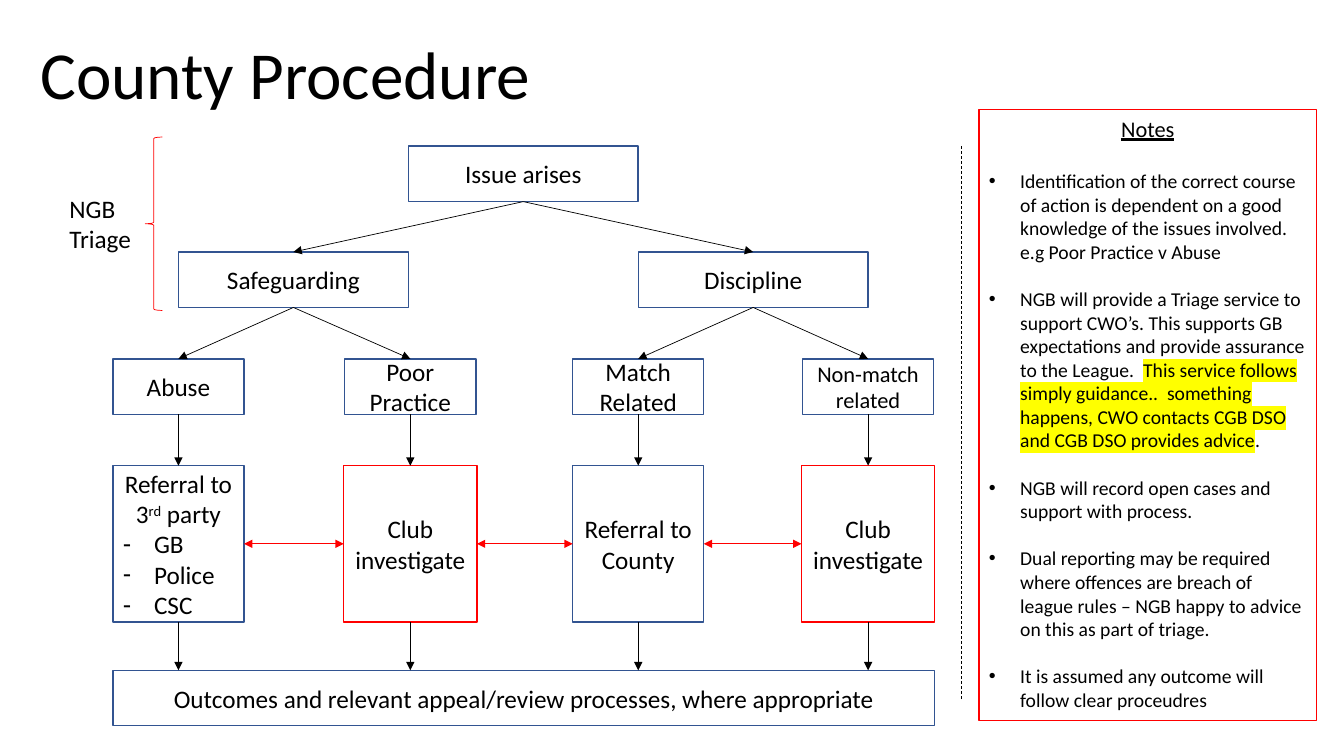
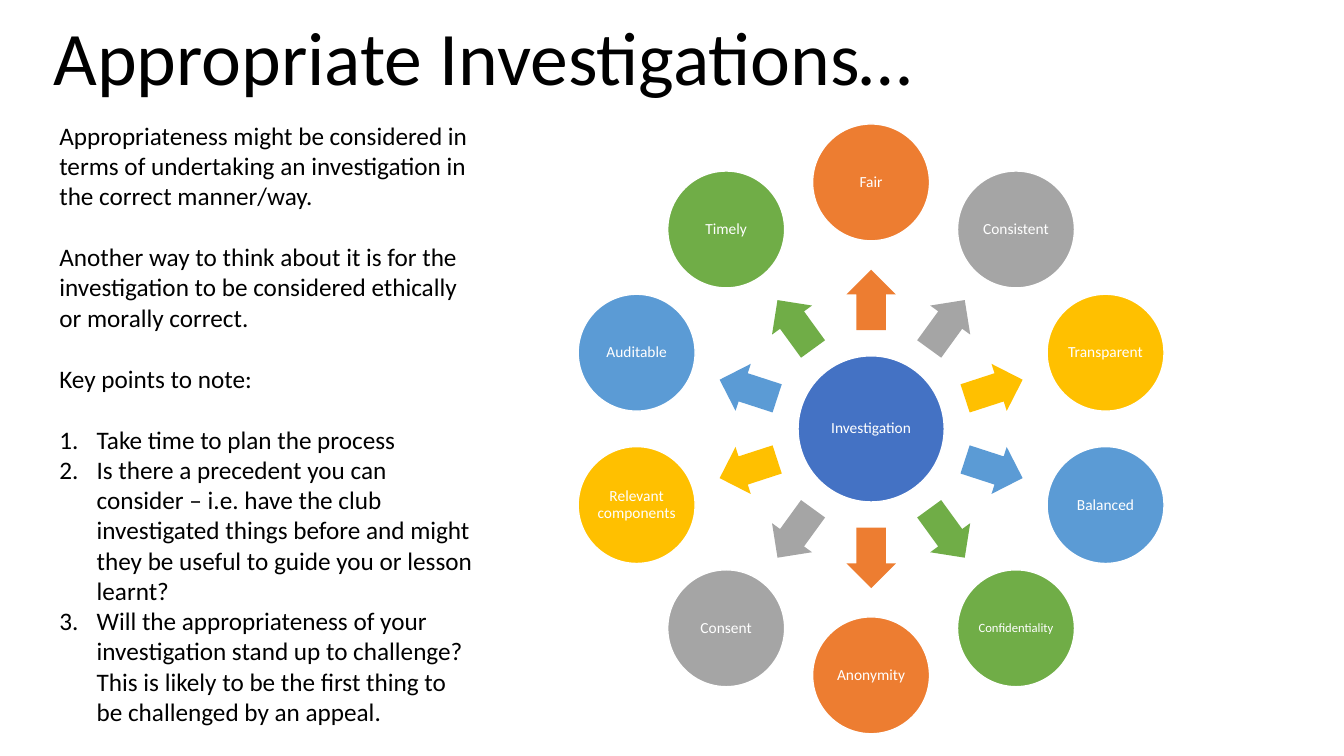
from math import cos, radians, sin

from lxml.etree import SubElement
from pptx import Presentation
from pptx.dml.color import RGBColor
from pptx.enum.dml import MSO_LINE
from pptx.enum.shapes import MSO_CONNECTOR, MSO_SHAPE
from pptx.enum.text import MSO_ANCHOR, MSO_AUTO_SIZE, PP_ALIGN
from pptx.oxml.ns import qn
from pptx.util import Pt

PX = 9144  # one px is a hundredth of an inch
FONT = "Calibri"
BLACK = RGBColor(0x00, 0x00, 0x00)
WHITE = RGBColor(0xFF, 0xFF, 0xFF)
NAVY = RGBColor(0x32, 0x54, 0x91)
RED = RGBColor(0xFF, 0x00, 0x00)
HUB_BLUE = RGBColor(0x44, 0x72, 0xC4)
WHEEL_COLOURS = [
    RGBColor(0xED, 0x7D, 0x31),
    RGBColor(0xA5, 0xA5, 0xA5),
    RGBColor(0xFF, 0xC0, 0x00),
    RGBColor(0x5B, 0x9B, 0xD5),
    RGBColor(0x70, 0xAD, 0x47),
]
HIGHLIGHT = "FFFF00"
TOP, LEFT, BOTTOM, RIGHT = range(4)

NOTES = [
    [("Identification of the correct course of action is dependent on a good "
      "knowledge of the issues involved.", {})],
    [("NGB will provide a Triage service to support CWO’s. This supports GB "
      "expectations and provide assurance to the League.  ", {}),
     ("This service follows simply guidance..  something happens, CWO contacts "
      "CGB DSO and CGB DSO provides advice", {"highlight": True}),
     (".", {})],
    [("NGB will record open cases and support with process.", {})],
    [("Dual reporting may be required where offences are breach of league rules "
      "– NGB happy to advice on this as part of triage.", {})],
    [("It is assumed any outcome will follow clear proceudres", {})],
]
INTRODUCTION = [
    "Appropriateness might be considered in terms of undertaking an "
    "investigation in the correct manner/way.",
    "Another way to think about it is for the investigation to be considered "
    "ethically or morally correct.",
    "Key points to note:",
]
KEY_POINTS = [
    "Take time to plan the process",
    "Is there a precedent you can consider – i.e. have the club investigated "
    "things before and might they be useful to guide you or lesson learnt?",
    "Will the appropriateness of your investigation stand up to challenge? "
    "This is likely to be the first thing to be challenged by an appeal.",
]
QUALITIES = ["Fair", "Consistent", "Transparent", "Balanced", "Confidentiality",
             "Anonymity", "Consent", "Relevant components", "Auditable", "Timely"]


def px(*lengths):
    return [round(length * PX) for length in lengths]


# Text
def add_span(para, text, size, colour=BLACK, underline=False, raised=False,
             highlight=False):
    span = para.add_run()
    span.text = text
    font = span.font
    font.size, font.name = Pt(size), FONT
    font.color.rgb = colour
    if underline:
        font.underline = True
    properties = font._element
    if raised:
        properties.set("baseline", "30000")
    if highlight:
        mark = SubElement(properties, qn("a:highlight"))
        SubElement(mark, qn("a:srgbClr")).set("val", HIGHLIGHT)
        properties.find(qn("a:latin")).addprevious(mark)


def add_para(frame, spans, size, colour=BLACK, align=PP_ALIGN.LEFT, before=0,
             bullet=None, indent=0, hanging=True):
    """Append a paragraph; spans is a string or a list of (text, style)."""
    para = frame.paragraphs[0]
    if para.runs:
        para = frame.add_paragraph()
    para.alignment = align
    para.space_before = Pt(before)
    properties = para._p.get_or_add_pPr()
    if indent:
        margin = px(indent)[0]
        properties.set("marL", str(margin))
        properties.set("indent", str(-margin if hanging else 0))
    if bullet == "number":
        SubElement(properties, qn("a:buAutoNum")).set("type", "arabicPeriod")
    elif bullet:
        SubElement(properties, qn("a:buFont")).set("typeface", "Arial")
        SubElement(properties, qn("a:buChar")).set("char", bullet)
    for text, style in ([(spans, {})] if isinstance(spans, str) else spans):
        add_span(para, text, size, colour, **style)
    return para


def add_text_box(page, left, top, width, height):
    frame = page.shapes.add_textbox(*px(left, top, width, height)).text_frame
    frame.word_wrap = True
    return frame


def add_title(page, text, left, top, width, height, size):
    title = page.shapes.title
    title.left, title.top, title.width, title.height = px(left, top, width, height)
    frame = title.text_frame
    frame.auto_size = MSO_AUTO_SIZE.NONE
    frame.word_wrap = False
    frame.vertical_anchor = MSO_ANCHOR.TOP
    add_para(frame, text, size)


# Shapes and lines
def add_figure(page, kind, left, top, width, height, fill=None, line=None, weight=1):
    figure = page.shapes.add_shape(kind, *px(left, top, width, height))
    figure.shadow.inherit = False
    if fill is None:
        figure.fill.background()
    else:
        figure.fill.solid()
        figure.fill.fore_color.rgb = fill
    if line is None:
        figure.line.fill.background()
    else:
        figure.line.color.rgb = line
        figure.line.width = Pt(weight)
    return figure


def add_step(page, text, left, top, width, height=55, line=NAVY, size=18):
    box = add_figure(page, MSO_SHAPE.RECTANGLE, left, top, width, height, line=line)
    box.text_frame.vertical_anchor = MSO_ANCHOR.MIDDLE
    add_para(box.text_frame, text, size, align=PP_ALIGN.CENTER)
    return box


def add_line(page, start, end, colour=BLACK):
    line = page.shapes.add_connector(MSO_CONNECTOR.STRAIGHT, *px(*start, *end))
    line.line.color.rgb = colour
    line.line.width = Pt(0.5)
    SubElement(line._element.spPr, qn("a:effectLst"))
    return line


def add_arrow(page, source, target=None, sides=(BOTTOM, TOP), end=(0, 0),
              colour=BLACK, double=False):
    """Arrow from a box side to another box side, or to the point end."""
    arrow = add_line(page, (0, 0), end, colour)
    arrow.begin_connect(source, sides[0])
    if target is not None:
        arrow.end_connect(target, sides[1])
    outline = arrow.line._get_or_add_ln()
    for tip in ("headEnd", "tailEnd") if double else ("tailEnd",):
        SubElement(outline, qn(f"a:{tip}")).set("type", "triangle")


# Regions of the procedure slide
def draw_flowchart(page, left, top):
    columns = [left + offset for offset in (65, 295, 521, 749)]
    branch_top, category_top = top + 105, top + 211
    action_top, outcome_top = top + 317, top + 520

    # Issue and its two branches
    issue = add_step(page, "Issue arises", (columns[0] + columns[2]) // 2, top, 228)
    branches = [add_step(page, text, x, branch_top, 228)
                for text, x in (("Safeguarding", columns[0]),
                                ("Discipline", columns[2]))]

    # Categories and actions, one pair per column
    categories = [add_step(page, text, x - 65, category_top, 130, size=size)
                  for (text, size), x in zip((("Abuse", 18), ("Poor Practice", 18),
                                              ("Match Related", 18),
                                              ("Non-match related", 16)), columns)]
    third_party = [("Referral to 3", {}), ("rd", {"raised": True}), (" party", {})]
    actions = [add_step(page, text, x - width // 2, action_top, width, 155, line)
               for (text, width, line), x in zip(((third_party, 130, NAVY),
                                                  ("Club investigate", 132, RED),
                                                  ("Referral to County", 130, NAVY),
                                                  ("Club investigate", 132, RED)),
                                                 columns)]
    for party in ("GB", "Police", "CSC"):
        add_para(actions[0].text_frame, party, 18, bullet="-", indent=31)

    add_step(page, "Outcomes and relevant appeal/review processes, where appropriate",
             left, outcome_top, 815)

    # Arrows
    for branch in branches:
        add_arrow(page, issue, branch)
    for index, (category, action) in enumerate(zip(categories, actions)):
        add_arrow(page, branches[index // 2], category)
        add_arrow(page, category, action)
        add_arrow(page, action, end=(columns[index], outcome_top))
    for action, neighbour in zip(actions, actions[1:]):
        add_arrow(page, action, neighbour, (RIGHT, LEFT), colour=RED, double=True)


def draw_triage_label(page, left, top):
    add_figure(page, MSO_SHAPE.LEFT_BRACE, left + 85, top, 17, 172, line=RED, weight=0.5)
    add_para(add_text_box(page, left, top + 51, 96, 71), "NGB Triage", 18)


def draw_notes(page, left, top, width, height):
    panel = add_figure(page, MSO_SHAPE.RECTANGLE, left, top, width, height,
                       line=RED, weight=0.75)
    frame = panel.text_frame
    frame.vertical_anchor = MSO_ANCHOR.TOP
    add_para(frame, [("Notes", {"underline": True})], 16, align=PP_ALIGN.CENTER)
    for index, note in enumerate(NOTES):
        add_para(frame, note, 14, before=17 if index else 19.5, bullet="•", indent=31)
        if index == 0:
            add_para(frame, "e.g Poor Practice v Abuse", 14, indent=31, hanging=False)


def build_procedure(page):
    add_title(page, "County Procedure", 30, 27, 512, 91, 48)
    draw_flowchart(page, 112, 145)
    draw_triage_label(page, 59, 136)
    divider = add_line(page, (954, 145), (954, 694))
    divider.line.dash_style = MSO_LINE.DASH
    draw_notes(page, 971, 109, 335, 606)


# Regions of the investigations slide
def draw_circle(page, text, centre_x, centre_y, diameter, fill, size=11):
    circle = add_figure(page, MSO_SHAPE.OVAL, centre_x - diameter / 2,
                        centre_y - diameter / 2, diameter, diameter, fill, WHITE)
    frame = circle.text_frame
    frame.vertical_anchor = MSO_ANCHOR.MIDDLE
    frame.margin_left = frame.margin_right = px(1)[0]
    frame.margin_top = frame.margin_bottom = px(1)[0]
    add_para(frame, text, size, WHITE, PP_ALIGN.CENTER).line_spacing = 0.9


def draw_wheel(page, centre_x, centre_y, circle_radius=244.5, arrow_radius=128):
    draw_circle(page, "Investigation", centre_x, centre_y, 145, HUB_BLUE)
    for index, quality in enumerate(QUALITIES):
        angle = index * 360 / len(QUALITIES) - 90
        across, down = cos(radians(angle)), sin(radians(angle))
        colour = WHEEL_COLOURS[index % len(WHEEL_COLOURS)]
        arrow = add_figure(page, MSO_SHAPE.RIGHT_ARROW,
                           centre_x + arrow_radius * across - 30,
                           centre_y + arrow_radius * down - 24.5, 60, 49, colour)
        arrow.adjustments[0], arrow.adjustments[1] = 0.6, 0.5
        arrow.rotation = angle % 360
        draw_circle(page, quality, centre_x + circle_radius * across,
                    centre_y + circle_radius * down, 116, colour,
                    9 if quality == "Confidentiality" else 11)


def draw_guidance(page, left, top, width, height):
    frame = add_text_box(page, left, top, width, height)
    for index, text in enumerate(INTRODUCTION):
        add_para(frame, text, 18, before=22 if index else 0)
    for index, text in enumerate(KEY_POINTS):
        add_para(frame, text, 18, before=0 if index else 22, bullet="number", indent=37)


def build_investigations(page):
    add_title(page, "Appropriate Investigations…", 43, 5, 882, 101, 54)
    draw_wheel(page, 864, 425.5)
    draw_guidance(page, 49, 114, 432, 616)


def main():
    deck = Presentation()
    deck.slide_width, deck.slide_height = px(1333, 750)
    for build in (build_procedure, build_investigations):
        build(deck.slides.add_slide(deck.slide_layouts[5]))
    deck.save("out.pptx")


if __name__ == "__main__":
    main()
